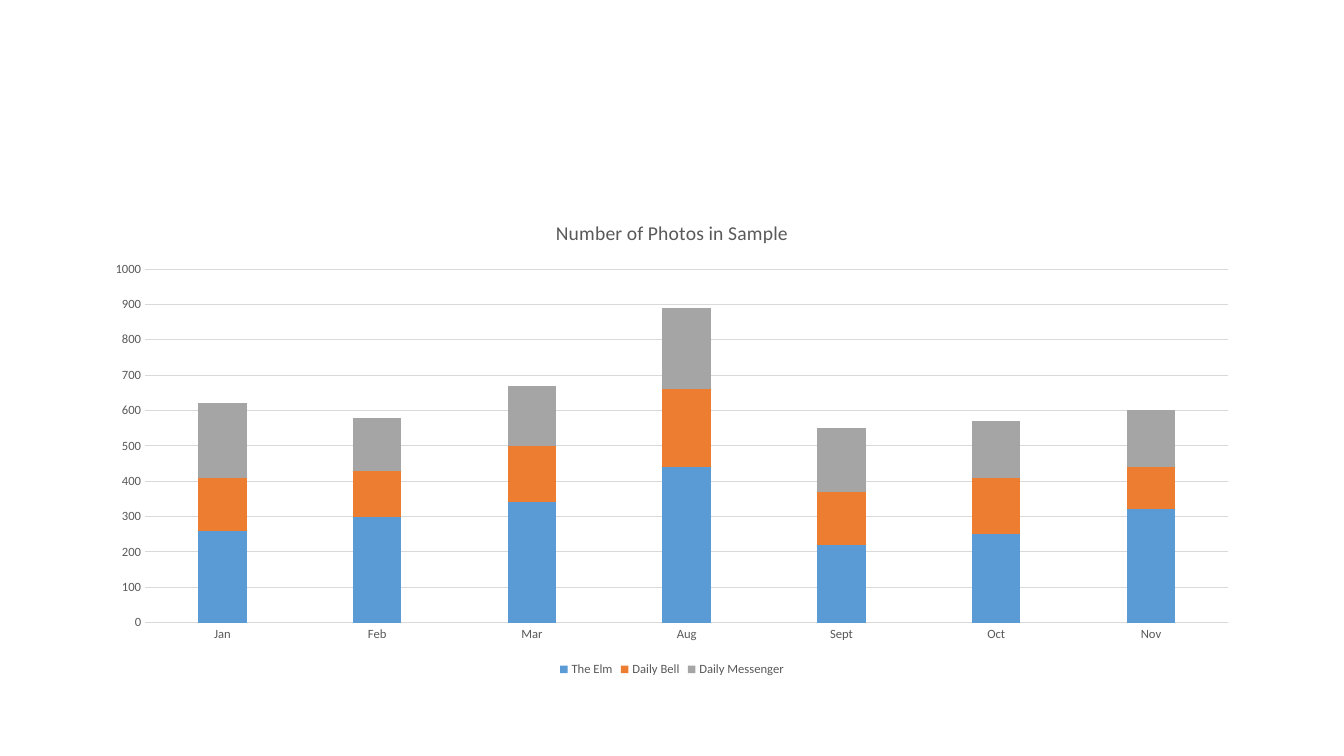
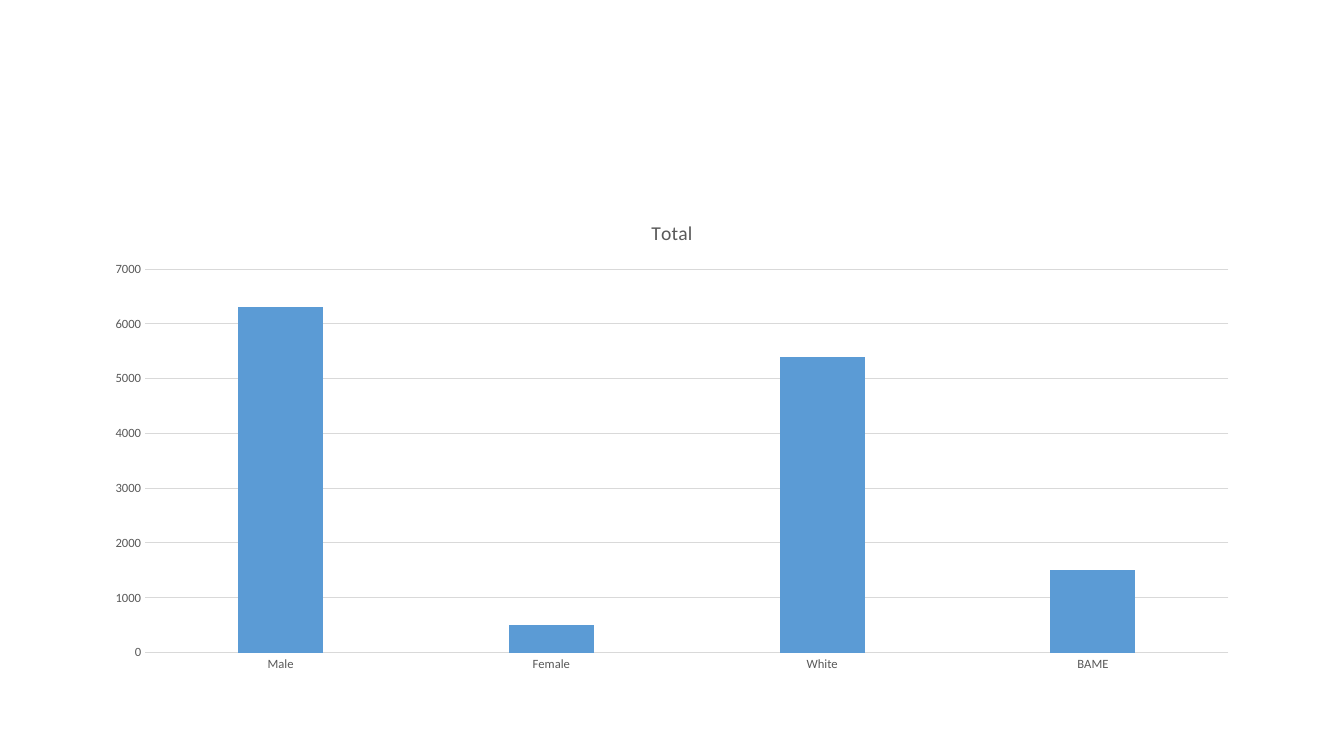
from dataclasses import dataclass

import pptx
import pptx.chart.data
import pptx.dml.color
import pptx.enum.chart
import pptx.util

Pt = pptx.util.Pt
CHART_TYPE = pptx.enum.chart.XL_CHART_TYPE


@dataclass(frozen=True)
class Theme:
    font: str = "Calibri"
    text: str = "595959"
    rule: str = "D9D9D9"
    background: str = "FFFFFF"
    series: tuple = ("5B9BD5", "ED7D31", "A5A5A5")
    title_size: float = 14
    label_size: float = 9
    rule_width: float = 0.75
    gap_width: int = 219
    page_size: tuple = (960, 540)
    chart_area: tuple = (66, 143.75, 828, 342.6)


THEME = Theme()


def color(value):
    return pptx.dml.color.RGBColor.from_string(value)


def style_font(font, size):
    font.name = THEME.font
    font.size = Pt(size)
    font.bold = False
    font.color.rgb = color(THEME.text)


def style_rule(line):
    line.color.rgb = color(THEME.rule)
    line.width = Pt(THEME.rule_width)


def add_page(deck):
    page = deck.slides.add_slide(deck.slide_layouts[6])
    page.background.fill.solid()
    page.background.fill.fore_color.rgb = color(THEME.background)
    return page


def set_title(chart, text):
    chart.has_title = True
    chart.chart_title.include_in_layout = False
    span = chart.chart_title.text_frame.paragraphs[0].add_run()
    span.text = text
    style_font(span.font, THEME.title_size)


def style_axes(chart, top, step):
    for axis in (chart.category_axis, chart.value_axis):
        axis.major_tick_mark = pptx.enum.chart.XL_TICK_MARK.NONE
        axis.minor_tick_mark = pptx.enum.chart.XL_TICK_MARK.NONE
        style_font(axis.tick_labels.font, THEME.label_size)
    style_rule(chart.category_axis.format.line)
    values = chart.value_axis
    values.minimum_scale, values.maximum_scale, values.major_unit = 0, top, step
    values.format.line.fill.background()
    values.has_major_gridlines = True
    style_rule(values.major_gridlines.format.line)


def add_legend(chart):
    chart.has_legend = True
    chart.legend.position = pptx.enum.chart.XL_LEGEND_POSITION.BOTTOM
    chart.legend.include_in_layout = False
    style_font(chart.legend.font, THEME.label_size)


def add_columns(page, kind, title, categories, series, overlap, top, step):
    data = pptx.chart.data.CategoryChartData()
    data.categories = categories
    for name, values in series.items():
        data.add_series(name, values)
    area = [Pt(length) for length in THEME.chart_area]
    chart = page.shapes.add_chart(kind, *area, data).chart
    chart.font.name = THEME.font
    chart.font.size = Pt(10)
    set_title(chart, title)
    style_axes(chart, top, step)

    # Columns
    plot = chart.plots[0]
    plot.gap_width = THEME.gap_width
    plot.overlap = overlap
    plot.vary_by_categories = False
    for columns, fill in zip(plot.series, THEME.series):
        columns.invert_if_negative = False
        columns.format.fill.solid()
        columns.format.fill.fore_color.rgb = color(fill)

    chart.has_legend = False
    if len(series) > 1:
        add_legend(chart)


def main():
    deck = pptx.Presentation()
    deck.slide_width, deck.slide_height = [Pt(side) for side in THEME.page_size]

    # Photos per month and newspaper
    add_columns(
        add_page(deck), CHART_TYPE.COLUMN_STACKED, "Number of Photos in Sample",
        ["Jan", "Feb", "Mar", "Aug", "Sept", "Oct", "Nov"],
        {
            "The Elm": [260, 300, 340, 440, 220, 250, 320],
            "Daily Bell": [150, 130, 160, 220, 150, 160, 120],
            "Daily Messenger": [210, 150, 170, 230, 180, 160, 160],
        },
        overlap=100, top=1000, step=100,
    )

    # Totals by group
    add_columns(
        add_page(deck), CHART_TYPE.COLUMN_CLUSTERED, "Total",
        ["Male", "Female", "White", "BAME"],
        {"Total": [6300, 500, 5400, 1500]},
        overlap=-27, top=7000, step=1000,
    )

    deck.save("out.pptx")


if __name__ == "__main__":
    main()
